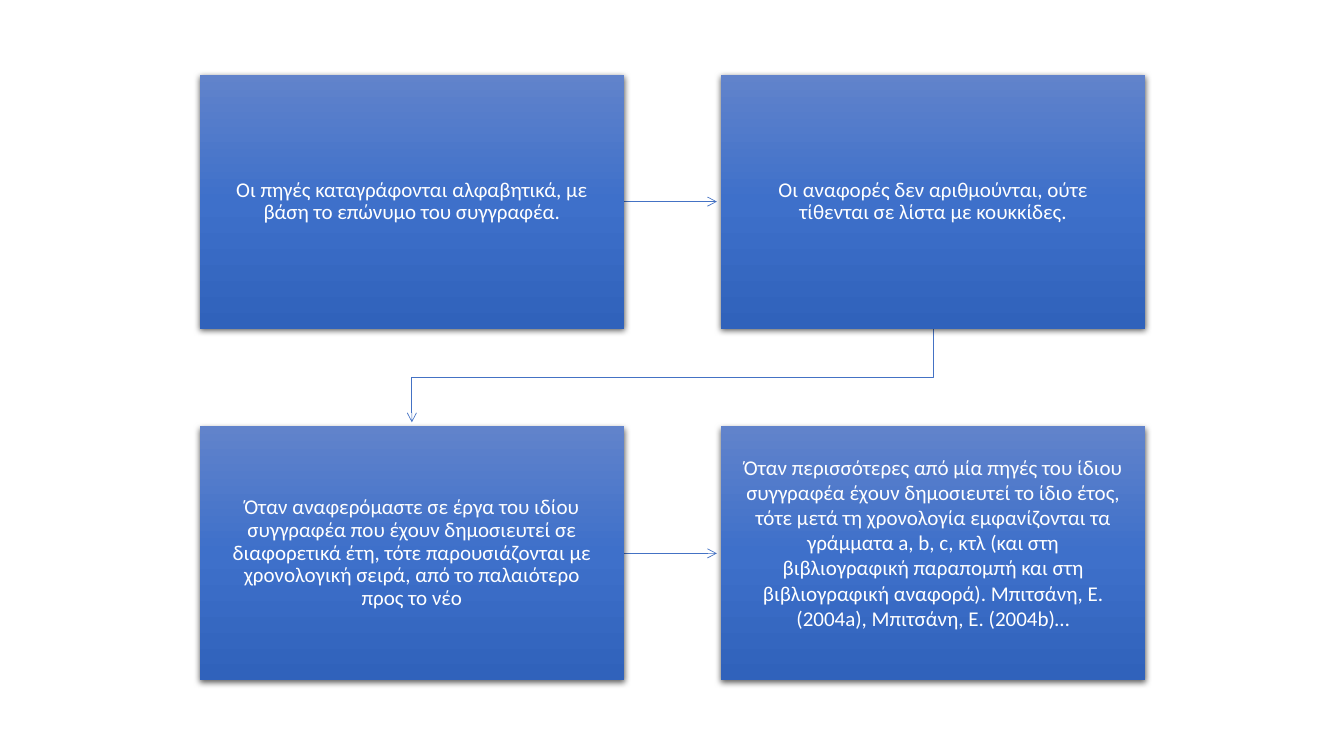
"""Build a slide with four citation rules joined by arrows."""
from copy import deepcopy
from lxml.etree import SubElement
from pptx import Presentation
from pptx.dml.color import RGBColor
from pptx.enum.shapes import MSO_CONNECTOR, MSO_SHAPE
from pptx.enum.text import MSO_ANCHOR, PP_ALIGN
from pptx.oxml import parse_xml
from pptx.oxml.ns import nsdecls, qn
from pptx.util import Inches, Pt

WHITE = RGBColor(0xFF, 0xFF, 0xFF)
BLUE = RGBColor(0x44, 0x72, 0xC4)
SHADES = [
    RGBColor(0x61, 0x83, 0xCB),
    RGBColor(0x3E, 0x70, 0xCA),
    RGBColor(0x30, 0x62, 0xBB),
]
SHADOW = (
    f'<a:outerShdw {nsdecls("a")} blurRad="57150" dist="19050" dir="5400000" '
    'algn="ctr" rotWithShape="0"><a:srgbClr val="000000">'
    '<a:alpha val="63000"/></a:srgbClr></a:outerShdw>'
)
LEFT, TOP = 1.98, 0.74
WIDTH, HEIGHT = 4.21, 2.52
STEP_X, STEP_Y = 5.17, 3.49
GAP = 0.04

RULES = [
    "Οι πηγές καταγράφονται αλφαβητικά, με βάση το επώνυμο του συγγραφέα.",
    "Οι αναφορές δεν αριθμούνται, ούτε τίθενται σε λίστα με κουκκίδες.",
    "Όταν αναφερόμαστε σε έργα του ιδίου συγγραφέα που έχουν δημοσιευτεί σε "
    "διαφορετικά έτη, τότε παρουσιάζονται με χρονολογική σειρά, από το "
    "παλαιότερο προς το νέο",
    "Όταν περισσότερες από μία πηγές του ίδιου συγγραφέα έχουν δημοσιευτεί το "
    "ίδιο έτος, τότε μετά τη χρονολογία εμφανίζονται τα γράμματα a, b, c, κτλ "
    "(και στη βιβλιογραφική παραπομπή και στη βιβλιογραφική αναφορά). "
    "Μπιτσάνη, Ε. (2004a), Μπιτσάνη, Ε. (2004b)…",
]
SPACING = [0.9, 0.9, 0.9, 1.0]
BOTTOMS = [0.22, 0.22, 0.22, 0.44]


def style_arrow(arrow):
    arrow.line.color.rgb = BLUE
    arrow.line.width = Pt(0.5)
    SubElement(arrow.line._get_or_add_ln(), qn("a:tailEnd"), type="arrow")


deck = Presentation()
deck.slide_width, deck.slide_height = Inches(13.33), Inches(7.5)
slide = deck.slides.add_slide(deck.slide_layouts[6])
shapes = slide.shapes

for row in range(2):
    start = LEFT + WIDTH
    end = LEFT + STEP_X - GAP
    mid = TOP + row * STEP_Y + HEIGHT / 2
    arrow = shapes.add_connector(
        MSO_CONNECTOR.STRAIGHT, Inches(start), Inches(mid), Inches(end), Inches(mid)
    )
    style_arrow(arrow)
    SubElement(arrow._element.spPr, qn("a:effectLst"))

near = LEFT + WIDTH / 2
far = near + STEP_X
floor = TOP + HEIGHT
turn = (floor + TOP + STEP_Y) / 2
bend = [(far, turn), (near, turn), (near, TOP + STEP_Y - GAP)]
pen = shapes.build_freeform(Inches(far), Inches(floor))
pen.add_line_segments([(Inches(x), Inches(y)) for x, y in bend], close=False)
elbow = pen.convert_to_shape()
elbow.fill.background()
elbow.shadow.inherit = False
style_arrow(elbow)

for i, (rule, space, bottom) in enumerate(zip(RULES, SPACING, BOTTOMS)):
    row, col = divmod(i, 2)
    box = shapes.add_shape(
        MSO_SHAPE.RECTANGLE,
        Inches(LEFT + col * STEP_X),
        Inches(TOP + row * STEP_Y),
        Inches(WIDTH),
        Inches(HEIGHT),
    )
    box.line.fill.background()
    box.fill.gradient()
    box.fill.gradient_angle = 270
    stops = box._element.spPr.find(qn("a:gradFill")).find(qn("a:gsLst"))
    stops.append(deepcopy(stops[0]))
    for place, (stop, shade) in enumerate(zip(box.fill.gradient_stops, SHADES)):
        stop.position = place / 2
        stop.color.rgb = shade
    box.shadow.inherit = False
    box._element.spPr.find(qn("a:effectLst")).append(parse_xml(SHADOW))

    frame = box.text_frame
    frame.word_wrap = True
    frame.vertical_anchor = MSO_ANCHOR.MIDDLE
    frame.margin_left = frame.margin_right = Inches(0.21)
    frame.margin_top, frame.margin_bottom = Inches(0.22), Inches(bottom)
    frame.text = rule
    line = frame.paragraphs[0]
    line.alignment = PP_ALIGN.CENTER
    line.line_spacing = space
    font = line.runs[0].font
    font.name, font.size = "Calibri", Pt(15)
    font.color.rgb = WHITE

deck.save("out.pptx")
